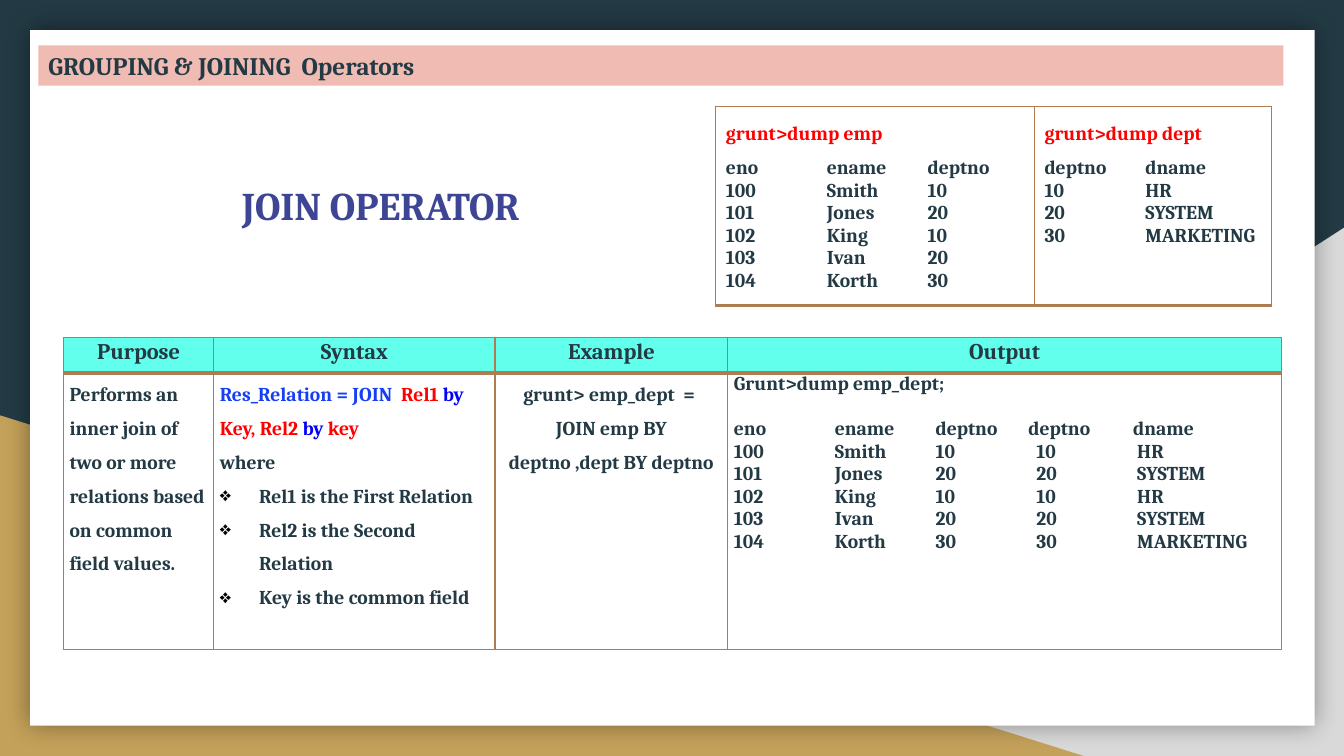
"""Build a slide that explains the JOIN operator with sample relations."""
from dataclasses import dataclass

from lxml import etree
from pptx import Presentation
from pptx.dml.color import RGBColor
from pptx.enum.shapes import MSO_SHAPE
from pptx.enum.text import MSO_ANCHOR, MSO_AUTO_SIZE, PP_ALIGN
from pptx.oxml.ns import qn
from pptx.util import Inches, Pt

LEFT, CENTER = PP_ALIGN.LEFT, PP_ALIGN.CENTER
MIDDLE, FIXED = MSO_ANCHOR.MIDDLE, MSO_AUTO_SIZE.NONE
RECT, WEDGE = MSO_SHAPE.RECTANGLE, MSO_SHAPE.RIGHT_TRIANGLE


@dataclass(frozen=True)
class Theme:
    """Hold the colours, font and type sizes."""
    font: str = "Cambria"
    ink: str = "233A44"
    grey: str = "D9D9D9"
    gold: str = "C4A15A"
    white: str = "FFFFFF"
    black: str = "000000"
    pink: str = "F0BBB2"
    aqua: str = "63FFED"
    brown: str = "AF7B51"
    red: str = "FF0000"
    blue: str = "0000FF"
    sky: str = "163EF5"
    plum: str = "3D4594"
    body: int = 14
    head: int = 16
    title: int = 18
    hero: int = 28


T = Theme()

EMP = [("100", "Smith", "10"), ("101", "Jones", "20"), ("102", "King", "10"),
       ("103", "Ivan", "20"), ("104", "Korth", "30")]
DEPT = [("10", "HR"), ("20", "SYSTEM"), ("30", "MARKETING")]


def rgb(code):
    """Turn a hex code into a colour."""
    return RGBColor.from_string(code)


def node(parent, tag, **attrs):
    """Append a drawing element with attributes."""
    return etree.SubElement(parent, qn("a:" + tag),
                            {key: str(val) for key, val in attrs.items()})


def write(frame, text, size=T.body, color=T.ink, align=LEFT, line=1.0,
          before=0, after=0, tabs=(), bullet=None):
    """Add a paragraph made of a string or of (text, colour) pairs."""
    para = frame.paragraphs[0]
    if para.runs:
        para = frame.add_paragraph()
    para.alignment, para.line_spacing = align, line
    para.space_before, para.space_after = Pt(before), Pt(after)
    props = para._p.get_or_add_pPr()
    if bullet:
        props.set("marL", str(Inches(0.39)))
        props.set("indent", str(-Inches(0.39)))
        node(node(props, "buClr"), "srgbClr", val=T.black)
        node(props, "buChar", char=bullet)
    if tabs:
        stops = node(props, "tabLst")
        for stop in tabs:
            node(stops, "tab", pos=Inches(stop), algn="l")
    for part, tint in [(text, color)] if isinstance(text, str) else text:
        run = para.add_run()
        run.text = part
        font = run.font
        font.name, font.size, font.bold = T.font, Pt(size), True
        font.color.rgb = rgb(tint)


def block(slide, kind, box, color):
    """Draw a plain filled shape."""
    shape = slide.shapes.add_shape(kind, *map(Inches, box))
    shape.shadow.inherit = False
    shape.fill.solid()
    shape.fill.fore_color.rgb = rgb(color)
    shape.line.fill.background()
    return shape


def scene(slide):
    """Draw the backdrop wedges and the white panel."""
    slide.background.fill.solid()
    slide.background.fill.fore_color.rgb = rgb(T.ink)
    right = block(slide, WEDGE, (5.22, 2.26, 8.11, 5.24), T.grey)
    right._element.spPr.xfrm.set("flipH", "1")
    block(slide, WEDGE, (0, 4.12, 10.75, 3.38), T.gold)
    panel = block(slide, RECT, (0.3, 0.3, 12.74, 6.9), T.white)
    effects = panel._element.spPr.find(qn("a:effectLst"))
    glow = node(effects, "outerShdw", blurRad=Pt(18), dist=0, dir=0,
                algn="ctr", rotWithShape=0)
    node(node(glow, "srgbClr", val=T.black), "alpha", val=40000)


def banner(slide, text):
    """Format the title placeholder as a coloured bar."""
    bar = slide.shapes.title
    bar.left, bar.top, bar.width, bar.height = map(
        Inches, (0.38, 0.45, 12.35, 0.4))
    bar.fill.solid()
    bar.fill.fore_color.rgb = rgb(T.pink)
    frame = bar.text_frame
    frame.auto_size, frame.vertical_anchor = FIXED, MIDDLE
    write(frame, text, size=T.title)
    slide.shapes._spTree.append(bar._element)


def hero(slide, text):
    """Add the large operator name."""
    box = slide.shapes.add_textbox(*map(Inches, (2.23, 1.75, 3.09, 0.57)))
    box.text_frame.word_wrap = False
    write(box.text_frame, text, size=T.hero, color=T.plum, align=CENTER)


def dress(cell, color, top=1, bottom=1):
    """Fill a cell and draw its borders."""
    cell.fill.solid()
    cell.fill.fore_color.rgb = rgb(color)
    props = cell._tc.get_or_add_tcPr()
    edges = {"lnL": 1, "lnR": 1, "lnT": top, "lnB": bottom}
    for spot, (tag, width) in enumerate(edges.items()):
        edge = node(props, tag, w=Pt(width))
        node(node(edge, "solidFill"), "srgbClr", val=T.brown)
        props.insert(spot, edge)


def grid(slide, left, top, cols, rows):
    """Add a table with the given column widths and row heights."""
    box = map(Inches, (left, top, sum(cols), sum(rows)))
    table = slide.shapes.add_table(len(rows), len(cols), *box).table
    table.first_row = table.horz_banding = False
    for col, width in zip(table.columns, cols):
        col.width = Inches(width)
    for row, height in zip(table.rows, rows):
        row.height = Inches(height)
    return table


def listing(frame, rows, tabs):
    """Write records with tabs between their fields."""
    for row in rows:
        write(frame, "\t".join(row), tabs=tabs)


def dumps(slide):
    """Show the two input relations."""
    table = grid(slide, 7.1, 1.06, (3.16, 2.35), (1.97,))
    parts = [("emp", ("eno", "ename", "deptno"), EMP),
             ("dept", ("deptno", "dname"), DEPT)]
    for cell, (name, heads, rows) in zip(table.rows[0].cells, parts):
        dress(cell, T.white, bottom=3)
        frame, tabs = cell.text_frame, range(1, len(heads))
        write(frame, "grunt>dump " + name, color=T.red, line=1.5)
        write(frame, "\t".join(heads), line=1.5, tabs=tabs)
        listing(frame, rows, tabs)


def syntax(frame):
    """Write the statement form and its terms."""
    write(frame, [("Res_Relation = JOIN  ", T.sky), ("Rel1 ", T.red),
                  ("by ", T.blue), ("Key, Rel2 ", T.red),
                  ("by", T.blue), (" key", T.red)], line=1.5)
    write(frame, "where", line=1.5)
    for term in ("Rel1 is the First Relation", "Rel2 is the Second Relation",
                 "Key is the common field"):
        write(frame, term, line=1.5, bullet="❖")


def output(frame):
    """Write the joined relation."""
    write(frame, "Grunt>dump emp_dept;")
    heads = ("eno", "ename", "deptno", "deptno", "dname")
    write(frame, "\t".join(heads), before=16, tabs=(1, 2, 2.92, 3.96))
    names = dict(DEPT)
    joined = [(*row, row[-1], names[row[-1]]) for row in EMP]
    listing(frame, joined, range(1, 5))


def guide(slide):
    """Show purpose, syntax, example and output of the operator."""
    table = grid(slide, 0.63, 3.35, (1.49, 2.79, 2.31, 5.49), (0.35, 2.74))
    for cell in table.iter_cells():
        cell.margin_left = cell.margin_right = Inches(0.06)
        cell.margin_top = cell.margin_bottom = 0
    heads = ("Purpose", "Syntax", "Example", "Output")
    for cell, head in zip(table.rows[0].cells, heads):
        dress(cell, T.aqua, bottom=3)
        write(cell.text_frame, head, size=T.head, align=CENTER,
              line=1.07, after=8)
    for cell in table.rows[1].cells:
        dress(cell, T.white, top=3)
    goal, form, case, result = [c.text_frame for c in table.rows[1].cells]
    write(goal, "Performs an inner join of two or more relations based on "
          "common field values.", line=1.5)
    syntax(form)
    for text in ("grunt> emp_dept  = ", "JOIN emp BY deptno ,dept BY deptno"):
        write(case, text, align=CENTER, line=1.5)
    output(result)


def main():
    """Build and save the slide."""
    deck = Presentation()
    deck.slide_width, deck.slide_height = Inches(13.33), Inches(7.5)
    slide = deck.slides.add_slide(deck.slide_layouts[5])
    scene(slide)
    banner(slide, "GROUPING & JOINING  Operators")
    guide(slide)
    hero(slide, "JOIN OPERATOR")
    dumps(slide)
    deck.save("out.pptx")


if __name__ == "__main__":
    main()
